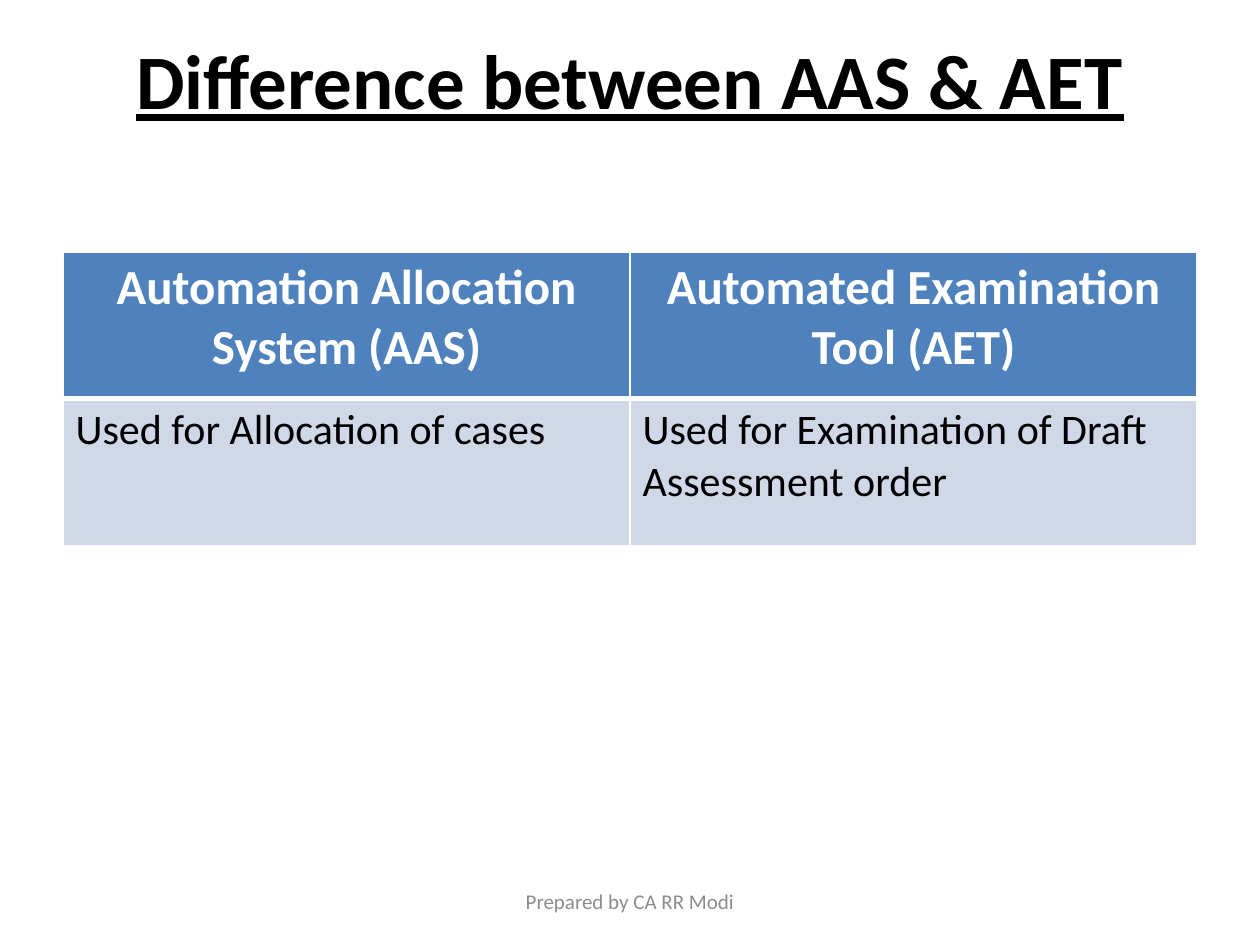
from lxml import etree
from pptx import Presentation
from pptx.dml.color import RGBColor
from pptx.enum.text import MSO_ANCHOR, PP_ALIGN
from pptx.oxml.ns import qn
from pptx.util import Inches, Pt

CENTER, LEFT = PP_ALIGN.CENTER, PP_ALIGN.LEFT
MIDDLE = MSO_ANCHOR.MIDDLE
TITLE_ONLY = 5
FONT = "Calibri"
COLORS = {
    "text": "000000",
    "white": "FFFFFF",
    "header": "4F81BD",
    "body": "D0D8E8",
    "footer": "8C8C8C",
}
SLIDE_W, SLIDE_H = Inches(10), Inches(7.5)
MARGIN = Inches(0.5)
CONTENT_W = SLIDE_W - 2 * MARGIN
ROW_H = Inches(1.165)

ROWS = [
    ["Automation Allocation System (AAS)", "Automated Examination Tool (AET)"],
    ["Used for Allocation of cases",
     "Used for Examination of Draft Assessment order"],
]


def rgb(name):
    return RGBColor.from_string(COLORS[name])


def write(tf, text, size, color, align=CENTER, bold=False, underline=False):
    tf.text = text
    tf.word_wrap = True
    p = tf.paragraphs[0]
    p.alignment = align
    font = p.font
    font.name, font.size = FONT, Pt(size)
    font.bold, font.underline = bold, underline
    font.color.rgb = rgb(color)


def set_borders(cell, widths):
    """Draw white cell borders; widths maps side letters to points."""
    tc_pr = cell._tc.get_or_add_tcPr()
    for i, (side, width) in enumerate(widths.items()):
        ln = etree.Element(qn(f"a:ln{side}"), w=str(Pt(width)))
        fill = etree.SubElement(ln, qn("a:solidFill"))
        etree.SubElement(fill, qn("a:srgbClr"), val=COLORS["white"])
        tc_pr.insert(i, ln)


def add_title(slide, text):
    title = slide.shapes.title
    title.left, title.top = MARGIN, 0
    title.width, title.height = CONTENT_W, Inches(1.25)
    title.text_frame.vertical_anchor = MIDDLE
    write(title.text_frame, text, 44, "text", bold=True, underline=True)


def add_comparison(slide, rows):
    table = slide.shapes.add_table(
        len(rows), len(rows[0]), MARGIN, Inches(2),
        CONTENT_W, ROW_H * len(rows)).table
    for r, texts in enumerate(rows):
        table.rows[r].height = ROW_H
        header = r == 0
        for c, text in enumerate(texts):
            cell = table.cell(r, c)
            cell.fill.solid()
            cell.fill.fore_color.rgb = rgb("header" if header else "body")
            if header:
                write(cell.text_frame, text, 28, "white", bold=True)
            else:
                write(cell.text_frame, text, 24, "text", align=LEFT)
            # The thick rule lies between header and body
            set_borders(cell, {"L": 1, "R": 1,
                               "T": 1 if header else 3,
                               "B": 3 if header else 1})


def add_footer(slide, text):
    width = Inches(3.17)
    sp = slide.shapes.add_textbox(
        (SLIDE_W - width) // 2, Inches(6.95), width, Inches(0.4))
    sp.text_frame.vertical_anchor = MIDDLE
    write(sp.text_frame, text, 12, "footer")


def main():
    prs = Presentation()
    prs.slide_width, prs.slide_height = SLIDE_W, SLIDE_H
    slide = prs.slides.add_slide(prs.slide_layouts[TITLE_ONLY])
    add_title(slide, "Difference between AAS & AET")
    add_comparison(slide, ROWS)
    add_footer(slide, "Prepared by CA RR Modi")
    prs.save("out.pptx")


if __name__ == "__main__":
    main()
